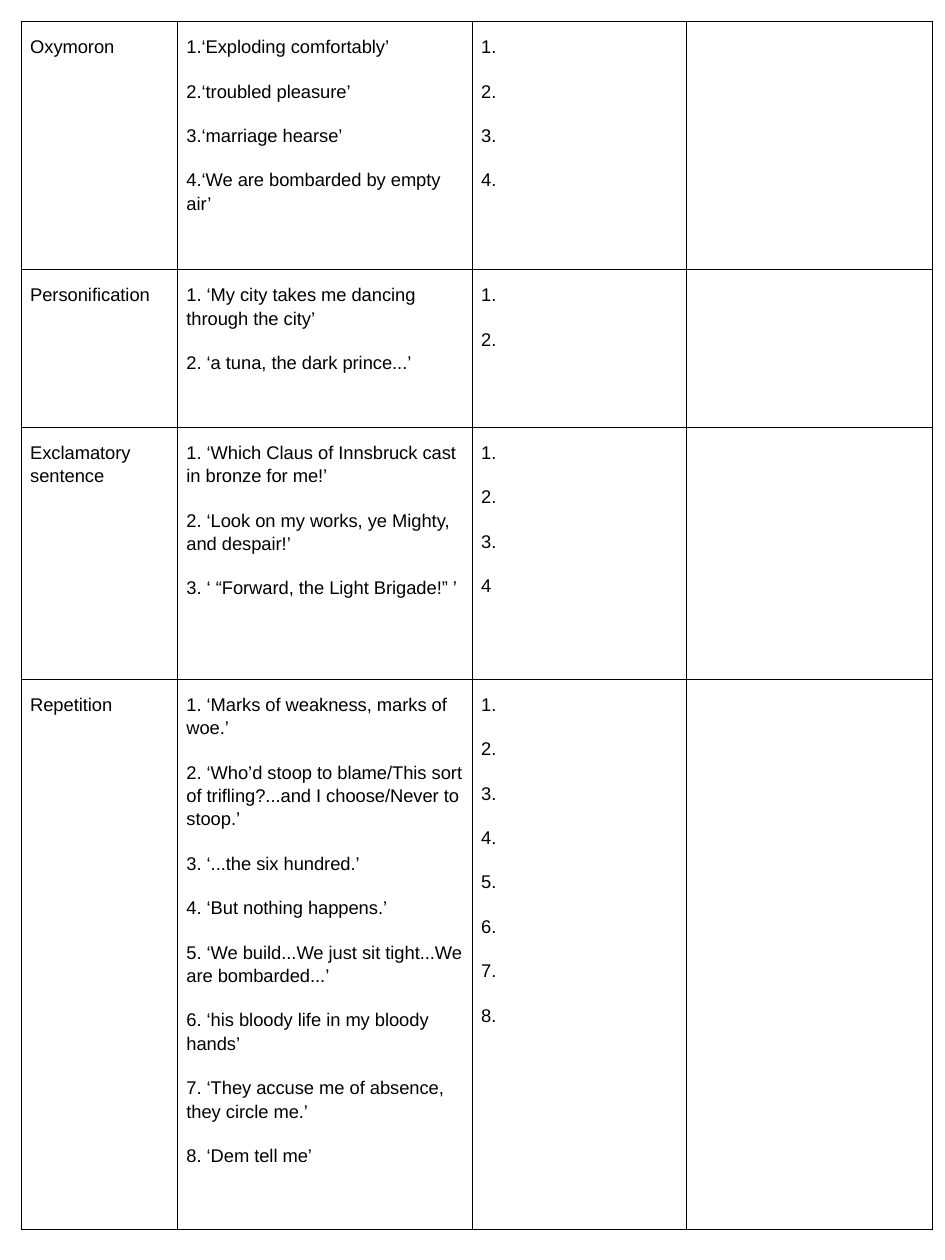
from lxml.etree import SubElement
from pptx import Presentation
from pptx.dml.color import RGBColor
from pptx.oxml.ns import qn
from pptx.util import Inches, Pt

FONT, SIZE, INK = "Arial", 10.5, "000000"
COLUMN_WIDTHS = [1.24, 2.34, 1.7, 1.95]


def numbers(count):
    return [f"{n}." for n in range(1, count + 1)]


# Each row: height, technique, quotations, answer numbers
ROWS = [
    (1.97, "Oxymoron", [
        "1.‘Exploding comfortably’",
        "2.‘troubled pleasure’",
        "3.‘marriage hearse’",
        "4.‘We are bombarded by empty air’",
    ], numbers(4)),
    (1.25, "Personification", [
        "1. ‘My city takes me dancing through the city’",
        "2. ‘a tuna, the dark prince...’",
    ], numbers(2)),
    (2, "Exclamatory sentence", [
        "1. ‘Which Claus of Innsbruck cast in bronze for me!’",
        "2. ‘Look on my works, ye Mighty, and despair!’",
        "3. ‘ “Forward, the Light Brigade!” ’",
    ], numbers(3) + ["4"]),
    (4.37, "Repetition", [
        "1. ‘Marks of weakness, marks of woe.’",
        "2. ‘Who’d stoop to blame/This sort of trifling?...and I choose/Never to stoop.’",
        "3. ‘...the six hundred.’",
        "4. ‘But nothing happens.’",
        "5. ‘We build...We just sit tight...We are bombarded...’",
        "6. ‘his bloody life in my bloody hands’",
        "7. ‘They accuse me of absence, they circle me.’",
        "8. ‘Dem tell me’",
    ], numbers(8)),
]


def color(value):
    return RGBColor.from_string(value)


def add_borders(cell):
    """Draw a thin line on all four sides of a cell."""
    properties = cell._tc.get_or_add_tcPr()
    for side in ("a:lnL", "a:lnR", "a:lnT", "a:lnB"):
        line = SubElement(properties, qn(side), w=str(Pt(0.75)))
        fill = SubElement(line, qn("a:solidFill"))
        SubElement(fill, qn("a:srgbClr"), val=INK)


def format_cell(cell):
    cell.margin_left = cell.margin_right = Inches(0.07)
    cell.margin_top = cell.margin_bottom = Inches(0.1)
    add_borders(cell)
    cell.fill.background()


def write_cell(cell, lines):
    """Write one spaced paragraph per line."""
    frame = cell.text_frame
    for index, line in enumerate(lines):
        para = frame.add_paragraph() if index else frame.paragraphs[0]
        para.text = line
        para.line_spacing = 1.15
        para.space_before = Pt(12 if index else 0)
        para.font.name = FONT
        para.font.size = Pt(SIZE)
        para.font.color.rgb = color(INK)
    para.space_after = Pt(12)


def add_worksheet(page):
    heights = [row[0] for row in ROWS]
    table = page.shapes.add_table(
        len(ROWS), len(COLUMN_WIDTHS), Inches(0.17), Inches(0.17),
        Inches(sum(COLUMN_WIDTHS)), Inches(sum(heights))).table
    table.first_row = table.horz_banding = False
    for column, width in zip(table.columns, COLUMN_WIDTHS):
        column.width = Inches(width)
    for row, height in zip(table.rows, heights):
        row.height = Inches(height)
    for cell in table.iter_cells():
        format_cell(cell)

    # The last column stays empty for notes
    for index, (_, technique, quotations, answers) in enumerate(ROWS):
        for column, lines in enumerate([[technique], quotations, answers]):
            write_cell(table.cell(index, column), lines)


def main():
    deck = Presentation()
    deck.slide_width, deck.slide_height = Inches(7.5), Inches(10)
    page = deck.slides.add_slide(deck.slide_layouts[6])
    add_worksheet(page)
    deck.save("out.pptx")


if __name__ == "__main__":
    main()
